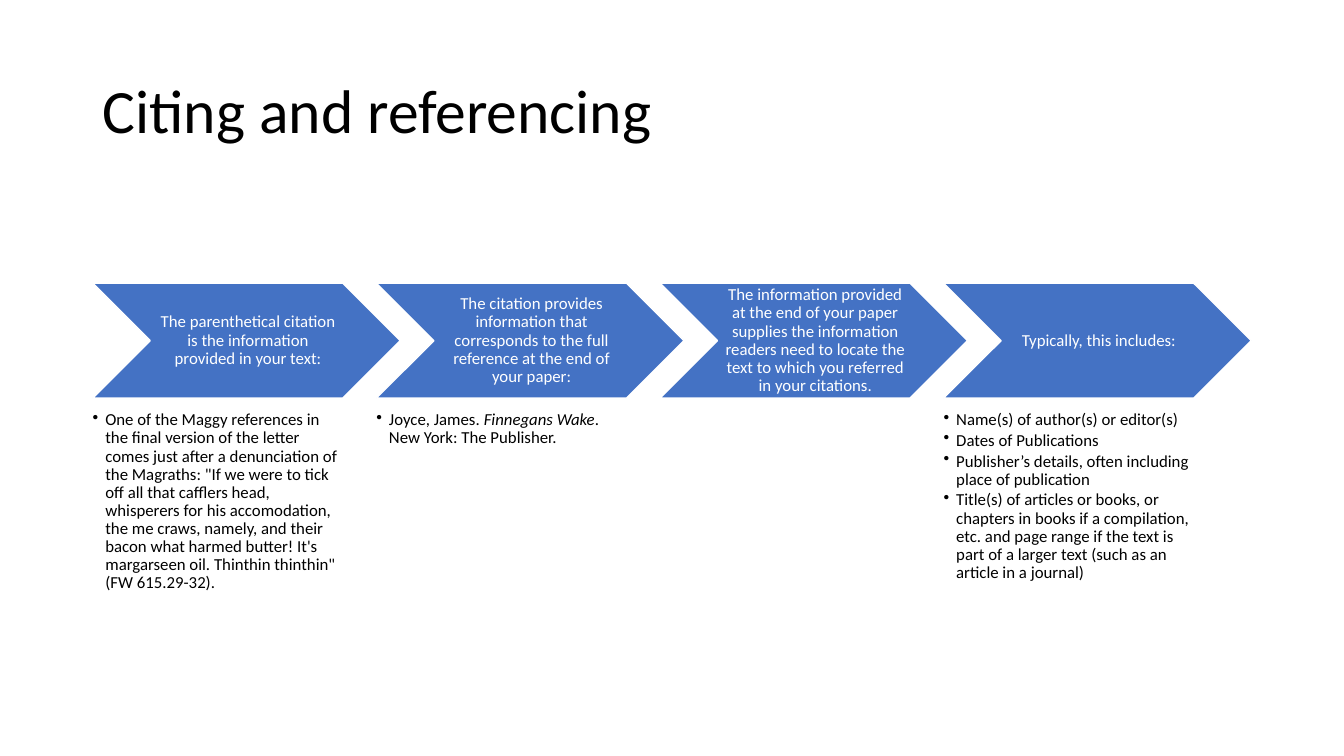
from dataclasses import dataclass

from lxml.etree import SubElement
from pptx import Presentation
from pptx.dml.color import RGBColor
from pptx.enum.shapes import MSO_SHAPE
from pptx.enum.text import MSO_ANCHOR, PP_ALIGN
from pptx.oxml.ns import qn
from pptx.slide import Slide
from pptx.text.text import TextFrame
from pptx.util import Inches, Pt

BLACK = RGBColor(0x00, 0x00, 0x00)
WHITE = RGBColor(0xFF, 0xFF, 0xFF)
BLUE = RGBColor(0x44, 0x72, 0xC4)
FONT = "Calibri"

LEFT = 0.92
STEP_PITCH = 2.813
CHEVRON_TOP, CHEVRON_WIDTH, CHEVRON_HEIGHT = 2.81, 3.05, 1.14
DETAIL_TOP, DETAIL_WIDTH, DETAIL_HEIGHT = 4.08, 2.44, 1.86
BULLET_INDENT = 0.125


@dataclass(frozen=True)
class Run:
    text: str
    italic: bool = False


@dataclass(frozen=True)
class Step:
    heading: str
    details: tuple[tuple[Run, ...], ...] = ()


STEPS = (
    Step(
        "The parenthetical citation is the information provided in your text:",
        ((Run(
            "One of the Maggy references in the final version of the letter comes "
            "just after a denunciation of the Magraths: \"If we were to tick off all "
            "that cafflers head, whisperers for his accomodation, the me craws, "
            "namely, and their bacon what harmed butter! It's margarseen oil. "
            "Thinthin thinthin\" (FW 615.29-32)."
        ),),),
    ),
    Step(
        "The citation provides information that corresponds to the full "
        "reference at the end of your paper:",
        ((
            Run("Joyce, James. "),
            Run("Finnegans Wake", italic=True),
            Run(". New York: The Publisher."),
        ),),
    ),
    Step(
        "The information provided at the end of your paper supplies the "
        "information readers need to locate the text to which you referred in "
        "your citations."
    ),
    Step(
        "Typically, this includes:",
        (
            (Run("Name(s) of author(s) or editor(s)"),),
            (Run("Dates of Publications"),),
            (Run("Publisher’s details, often including place of publication"),),
            (Run(
                "Title(s) of articles or books, or chapters in books if a "
                "compilation, etc. and page range if the text is part of a larger "
                "text (such as an article in a journal)"
            ),),
        ),
    ),
)


def write_text(
    tf: TextFrame,
    paragraphs: tuple[tuple[Run, ...], ...],
    *,
    size: float = 12,
    color: RGBColor = BLACK,
    align: PP_ALIGN = PP_ALIGN.LEFT,
    anchor: MSO_ANCHOR = MSO_ANCHOR.TOP,
    insets: tuple[float, float, float, float] = (0, 0, 0, 0),
    space_after: float = 0,
    bullet: bool = False,
) -> None:
    """Fill a text frame; insets run left, top, right, bottom in inches."""
    tf.word_wrap = True
    tf.vertical_anchor = anchor
    tf.margin_left, tf.margin_top, tf.margin_right, tf.margin_bottom = map(Inches, insets)
    for index, runs in enumerate(paragraphs):
        p = tf.add_paragraph() if index else tf.paragraphs[0]
        p.alignment = align
        p.line_spacing = 0.9
        p.space_after = Pt(space_after)
        if bullet:
            pPr = p._p.get_or_add_pPr()
            pPr.set("marL", str(Inches(BULLET_INDENT)))
            pPr.set("indent", str(-Inches(BULLET_INDENT)))
            SubElement(pPr, qn("a:buChar")).set("char", "•")
        for run in runs:
            r = p.add_run()
            r.text = run.text
            r.font.name = FONT
            r.font.size = Pt(size)
            r.font.italic = run.italic
            r.font.color.rgb = color


def add_title(s: Slide, text: str) -> None:
    sp = s.shapes.add_textbox(Inches(LEFT), Inches(0.4), Inches(11.5), Inches(1.45))
    write_text(sp.text_frame, ((Run(text),),), size=44,
               anchor=MSO_ANCHOR.MIDDLE, insets=(0.1, 0.05, 0.1, 0.05))


def add_step(s: Slide, step: Step, left: float) -> None:
    """Draw a chevron heading and the bulleted details below it."""
    sp = s.shapes.add_shape(
        MSO_SHAPE.CHEVRON, Inches(left), Inches(CHEVRON_TOP),
        Inches(CHEVRON_WIDTH), Inches(CHEVRON_HEIGHT),
    )
    sp.shadow.inherit = False
    sp.fill.solid()
    sp.fill.fore_color.rgb = BLUE
    sp.line.color.rgb = WHITE
    sp.line.width = Pt(1)
    write_text(sp.text_frame, ((Run(step.heading),),), color=WHITE,
               align=PP_ALIGN.CENTER, anchor=MSO_ANCHOR.MIDDLE,
               insets=(0.05, 0.02, 0.02, 0.02))
    if step.details:
        box = s.shapes.add_textbox(
            Inches(left), Inches(DETAIL_TOP),
            Inches(DETAIL_WIDTH), Inches(DETAIL_HEIGHT),
        )
        write_text(box.text_frame, step.details, space_after=1.8, bullet=True)


def main() -> None:
    prs = Presentation()
    prs.slide_width, prs.slide_height = Inches(13.33), Inches(7.5)
    s = prs.slides.add_slide(prs.slide_layouts[6])
    add_title(s, "Citing and referencing")
    for index, step in enumerate(STEPS):
        add_step(s, step, LEFT + index * STEP_PITCH)
    prs.save("out.pptx")


if __name__ == "__main__":
    main()
